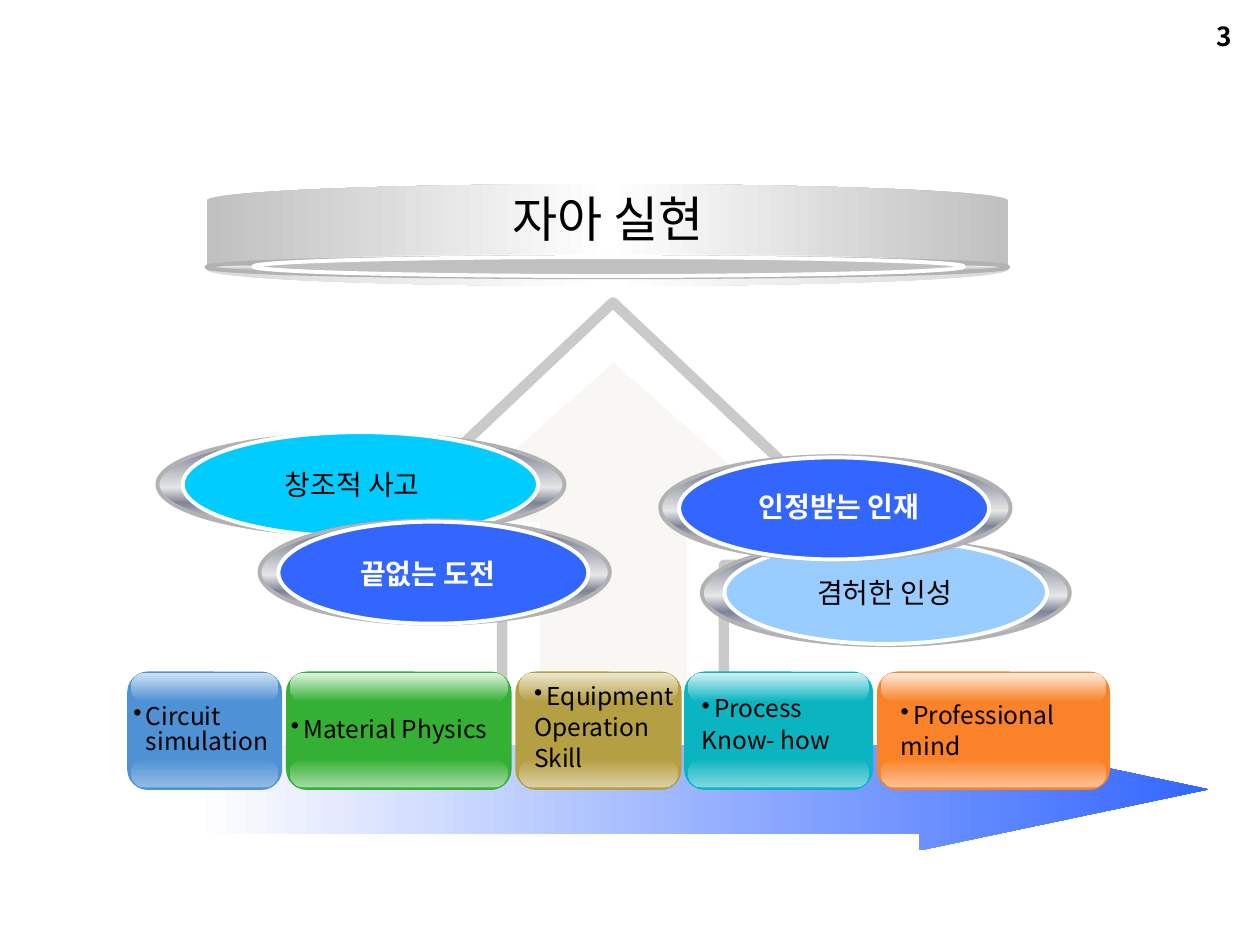
"""Build a slide of skills and attitudes that lead up to self-realisation."""
from lxml.etree import SubElement
from pptx import Presentation
from pptx.dml.color import RGBColor
from pptx.enum.shapes import MSO_SHAPE
from pptx.enum.text import MSO_ANCHOR, PP_ALIGN
from pptx.oxml.ns import qn
from pptx.util import Inches, Pt

INK = {
    "black": "000000", "white": "FFFFFF", "blue": "3366FF", "cyan": "00CCFF",
    "sky": "99CCFF", "silver": "C0C0C0", "rim": "B2B2B2", "frame": "969696",
    "cream": "EEECE1",
}
STEEL = [(0, "E6E6E6"), (15, "7D8496"), (53, "E6E6E6"),
         (68, "7D8496"), (93, "E6E6E6"), (100, "FFFFFF")]
SANS = "Noto Sans CJK KR"

deck = Presentation()
deck.slide_width, deck.slide_height = Inches(10), Inches(7.5)
slide = deck.slides.add_slide(deck.slide_layouts[6])


def draw(kind, box, fill=None, line=None, width=2.25, adj=(), angle=90):
    """Add a preset shape with a plain, graded or empty fill."""
    shape = slide.shapes.add_shape(kind, *map(Inches, box))
    shape.shadow.inherit = False
    for spot, value in enumerate(adj):
        shape.adjustments[spot] = value
    if fill is None:
        shape.fill.background()
    elif isinstance(fill, str):
        shape.fill.solid()
        shape.fill.fore_color.rgb = RGBColor.from_string(fill)
    else:
        shape.fill.gradient()
        grad = shape._element.spPr.find(qn("a:gradFill"))
        stops = grad.find(qn("a:gsLst"))
        for stop in list(stops):
            stops.remove(stop)
        for place, ink in fill:
            stop = SubElement(stops, qn("a:gs"), pos=str(place * 1000))
            SubElement(stop, qn("a:srgbClr"), val=ink)
        grad.find(qn("a:lin")).set("ang", str(angle * 60000))
    if line:
        shape.line.color.rgb = RGBColor.from_string(line)
        shape.line.width = Pt(width)
    else:
        shape.line.fill.background()
    return shape


def write(box, words, size, ink="black", bold=False, align=PP_ALIGN.CENTER,
          font=SANS, middle=False, wrap=True):
    """Add a text box with one font and return its text frame."""
    frame = slide.shapes.add_textbox(*map(Inches, box)).text_frame
    frame.word_wrap = wrap
    frame.vertical_anchor = MSO_ANCHOR.MIDDLE if middle else MSO_ANCHOR.TOP
    frame.text = words
    for para in frame.paragraphs:
        para.alignment = align
        for run in para.runs:
            run.font.size, run.font.bold, run.font.name = Pt(size), bold, font
            run.font.color.rgb = RGBColor.from_string(INK[ink])
            SubElement(run.font._element, qn("a:ea"), typeface=SANS)
    return frame


write((7.55, 0.11, 2.33, 0.25), "3", 15, bold=True, align=PP_ALIGN.RIGHT)

frame = draw(MSO_SHAPE.UP_ARROW, (2.66, 2.4, 4.41, 3.85), None,
             INK["frame"], 6, (0.399, 0.541))
core = draw(MSO_SHAPE.UP_ARROW, (3.44, 2.88, 2.86, 3.03), INK["cream"],
            adj=(0.407, 0.44))
for arrow, alpha in ((frame.line, 50), (core, 39)):
    tint = arrow.fill.fore_color._xFill.find(qn("a:srgbClr"))
    SubElement(tint, qn("a:alpha"), val=str(alpha * 1000))

ovals = [
    ((5.57, 4.29, 2.92, 0.83), (5.75, 4.29, 2.56, 0.82), "sky",
     "겸허한 인성", (6.32, 4.52, 1.4, 0.37)),
    ((1.25, 3.44, 3.23, 0.81), (1.45, 3.43, 2.82, 0.83), "cyan",
     "창조적 사고", (2.1, 3.66, 1.39, 0.37)),
    ((2.06, 4.13, 2.78, 0.82), (2.21, 4.14, 2.46, 0.81), "blue",
     "끝없는 도전", (2.53, 4.37, 1.73, 0.37)),
    ((5.24, 3.62, 2.78, 0.82), (5.39, 3.63, 2.46, 0.81), "blue",
     "인정받는 인재", (5.4, 3.84, 2.52, 0.37)),
]
for rim, face, ink, words, box in ovals:
    draw(MSO_SHAPE.OVAL, rim, STEEL, INK["rim"])
    draw(MSO_SHAPE.OVAL, face, INK[ink], INK["white"])
    strong = ink == "blue"
    write(box, words, 16, "white" if strong else "black", strong, wrap=strong)

draw(MSO_SHAPE.RIGHT_ARROW, (1.56, 5.78, 8.03, 0.97),
     [(0, INK["white"]), (100, INK["blue"])], adj=(0.722, 2.364), angle=0)

skills = [
    (1.01, 1.23, "4E91D4", "93BCE5", "CEE1F3",
     "Circuit simulation", (0.96, 5.46, 1.5), True),
    (2.27, 1.79, "34B034", "A3DBA3", "E0F3E0",
     "Material Physics", (2.21, 5.46, 2.07), True),
    (4.09, 1.32, "B59F43", "DBD0A4", "EDE8D1",
     "Equipment\nOperation\nSkill", (4.14, 5.39, 1.48), False),
    (5.43, 1.5, "0BB4C1", "82D8DF", "D3F1F4",
     "Process\nKnow- how", (5.47, 5.49, 2.07), False),
    (6.96, 1.85, "FA8228", "FDC296", "FEECDE",
     "Professional\nmind", (7.05, 5.47, 1.76), True),
]
for left, width, base, glow, shine, words, box, middle in skills:
    draw(MSO_SHAPE.ROUNDED_RECTANGLE, (left, 5.33, width, 0.94), base,
         adj=(0.175,))
    for top, stops in ((6.02, [(0, base), (100, glow)]),
                       (5.34, [(0, shine), (100, base)])):
        draw(MSO_SHAPE.ROUNDED_RECTANGLE,
             (left + 0.03, top, width - 0.06, 0.23), stops, adj=(0.5,))
    label = write((*box, 0.68), words, 14, align=PP_ALIGN.LEFT, middle=middle)
    for row, para in enumerate(label.paragraphs):
        para.space_before, para.line_spacing = Pt(3.5), 0.85
        props = para._p.get_or_add_pPr()
        props.set("marL", str(Inches(0.1)))
        props.set("indent", str(-Inches(0.1)))
        if row == 0:
            SubElement(props, qn("a:buChar"), char="•")
        else:
            SubElement(props, qn("a:buNone"))

silver, white = INK["silver"], INK["white"]
drum = [
    draw(MSO_SHAPE.CAN, (1.64, 1.46, 6.36, 0.81),
         [(0, silver), (50, white), (100, silver)], adj=(0.321,), angle=0),
    draw(MSO_SHAPE.OVAL, (1.64, 2.04, 6.36, 0.16), STEEL, INK["rim"]),
    draw(MSO_SHAPE.OVAL, (2.01, 2.04, 5.64, 0.15), silver, white),
]
for part in drum:
    part.rotation = 180
title = write((1.63, 1.41, 6.39, 0.64), "자아 실현", 28, font="Arial",
              middle=True)
title.margin_left = title.margin_right = 0
title.margin_top = title.margin_bottom = 0

deck.save("out.pptx")
